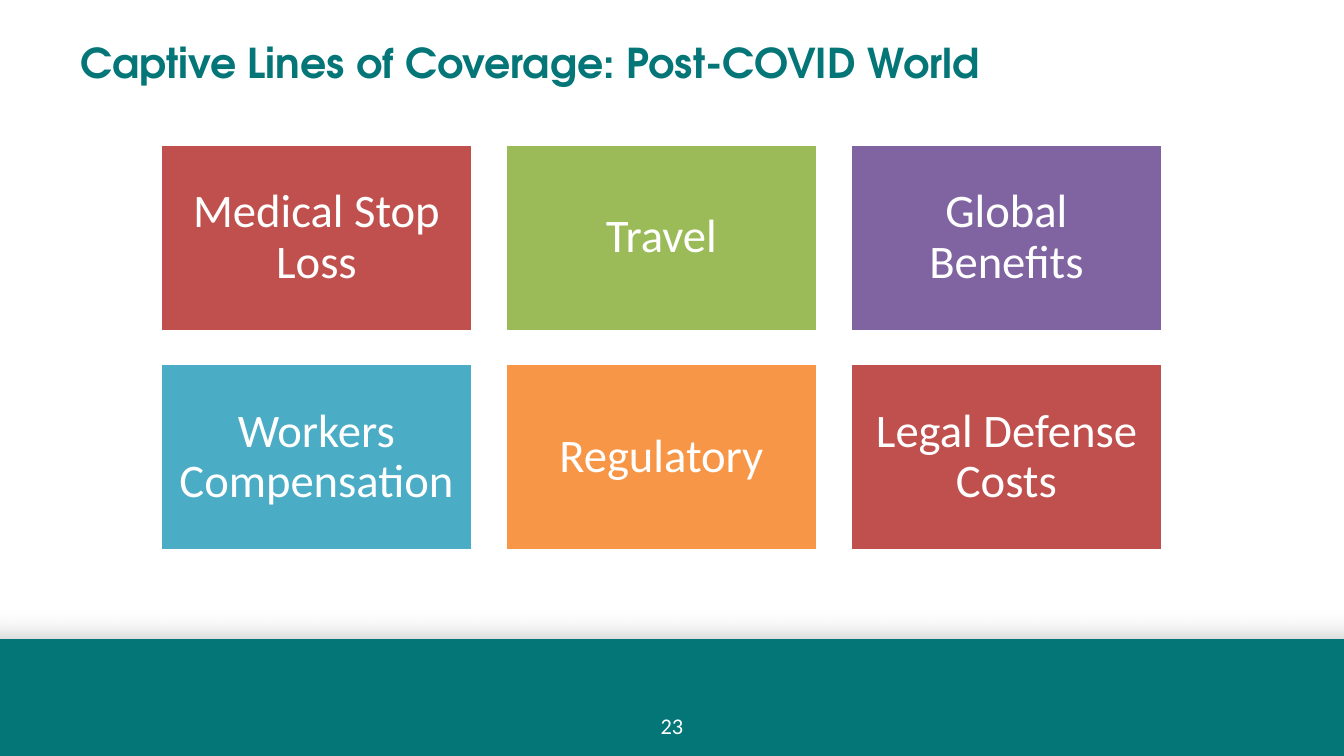
from typing import NamedTuple

from lxml.etree import SubElement
from pptx import Presentation
from pptx.dml.color import RGBColor
from pptx.enum.shapes import MSO_SHAPE
from pptx.enum.text import MSO_ANCHOR, PP_ALIGN
from pptx.oxml.ns import qn
from pptx.shapes.autoshape import Shape
from pptx.slide import Slide
from pptx.util import Cm, Pt

COLORS = {
    "white": "FFFFFF",
    "grey": "D9D9D9",
    "teal": "047678",
    "red": "C0504D",
    "green": "9BBB59",
    "purple": "8064A2",
    "blue": "4BACC6",
    "orange": "F79646",
}

SLIDE_WIDTH, SLIDE_HEIGHT = 25.4, 14.29
COLUMNS = 3
GRID_LEFT, GRID_TOP = 3.02, 2.72
TILE_WIDTH, TILE_HEIGHT = 5.92, 3.55
TILE_GAP = 0.6


class Box(NamedTuple):
    """A rectangle in centimetres."""
    left: float
    top: float
    width: float
    height: float


class TextStyle(NamedTuple):
    font: str
    size: float
    color: str
    bold: bool = False
    alignment: PP_ALIGN = PP_ALIGN.CENTER
    anchor: MSO_ANCHOR = MSO_ANCHOR.MIDDLE
    line_spacing: float = 1.0


class Tile(NamedTuple):
    label: str
    color: str


TITLE_STYLE = TextStyle("TeX Gyre Adventor", 22, "teal", bold=True,
                        alignment=PP_ALIGN.LEFT, anchor=MSO_ANCHOR.TOP)
TILE_STYLE = TextStyle("Calibri", 25, "white", line_spacing=0.9)
NUMBER_STYLE = TextStyle("Calibri", 12, "white", anchor=MSO_ANCHOR.BOTTOM)

TILES = [
    Tile("Medical Stop Loss", "red"),
    Tile("Travel", "green"),
    Tile("Global Benefits", "purple"),
    Tile("Workers Compensation", "blue"),
    Tile("Regulatory", "orange"),
    Tile("Legal Defense Costs", "red"),
]


def rgb(name: str) -> RGBColor:
    return RGBColor.from_string(COLORS[name])


def lengths(box: Box) -> list[Cm]:
    return [Cm(value) for value in box]


def write_text(shape: Shape, text: str, style: TextStyle) -> None:
    frame = shape.text_frame
    frame.word_wrap = True
    frame.vertical_anchor = style.anchor
    paragraph = frame.paragraphs[0]
    paragraph.alignment = style.alignment
    paragraph.line_spacing = style.line_spacing
    run = paragraph.add_run()
    run.text = text
    run.font.name = style.font
    run.font.size = Pt(style.size)
    run.font.bold = style.bold
    run.font.color.rgb = rgb(style.color)


def add_text(slide: Slide, box: Box, text: str, style: TextStyle) -> None:
    write_text(slide.shapes.add_textbox(*lengths(box)), text, style)


def add_rectangle(slide: Slide, box: Box, fill: str, line: str, line_width: float) -> Shape:
    shape = slide.shapes.add_shape(MSO_SHAPE.RECTANGLE, *lengths(box))
    shape.shadow.inherit = False
    shape.fill.solid()
    shape.fill.fore_color.rgb = rgb(fill)
    shape.line.color.rgb = rgb(line)
    shape.line.width = Pt(line_width)
    return shape


def add_footer_shade(slide: Slide, box: Box) -> None:
    """Add a grey band that fades upwards to transparent white."""
    shape = slide.shapes.add_shape(MSO_SHAPE.RECTANGLE, *lengths(box))
    shape.shadow.inherit = False
    shape.line.fill.background()
    shape.fill.gradient()
    shape.fill.gradient_angle = 90
    for stop, color in zip(shape.fill.gradient_stops, ("grey", "white")):
        stop.color.rgb = rgb(color)
    last_color = shape._element.spPr.findall(".//" + qn("a:srgbClr"))[-1]
    SubElement(last_color, qn("a:alpha"), val="0")


def add_tile(slide: Slide, index: int, tile: Tile) -> None:
    row, column = divmod(index, COLUMNS)
    box = Box(GRID_LEFT + column * (TILE_WIDTH + TILE_GAP),
              GRID_TOP + row * (TILE_HEIGHT + TILE_GAP),
              TILE_WIDTH, TILE_HEIGHT)
    shape = add_rectangle(slide, box, tile.color, "white", 2)
    frame = shape.text_frame
    frame.margin_left = frame.margin_right = Cm(0.25)
    frame.margin_top = frame.margin_bottom = Cm(0.25)
    write_text(shape, tile.label, TILE_STYLE)


def main() -> None:
    presentation = Presentation()
    presentation.slide_width = Cm(SLIDE_WIDTH)
    presentation.slide_height = Cm(SLIDE_HEIGHT)
    slide = presentation.slides.add_slide(presentation.slide_layouts[6])

    add_footer_shade(slide, Box(0, 11.52, SLIDE_WIDTH, 0.58))
    add_rectangle(slide, Box(0, 12.09, SLIDE_WIDTH, 2.2), "teal", "teal", 0.75)
    add_text(slide, Box(9.74, 13.34, 5.92, 0.76), "23", NUMBER_STYLE)
    add_text(slide, Box(1.27, 0.58, 22.86, 2.39),
             "Captive Lines of Coverage: Post-COVID World", TITLE_STYLE)
    for index, tile in enumerate(TILES):
        add_tile(slide, index, tile)

    presentation.save("out.pptx")


if __name__ == "__main__":
    main()
